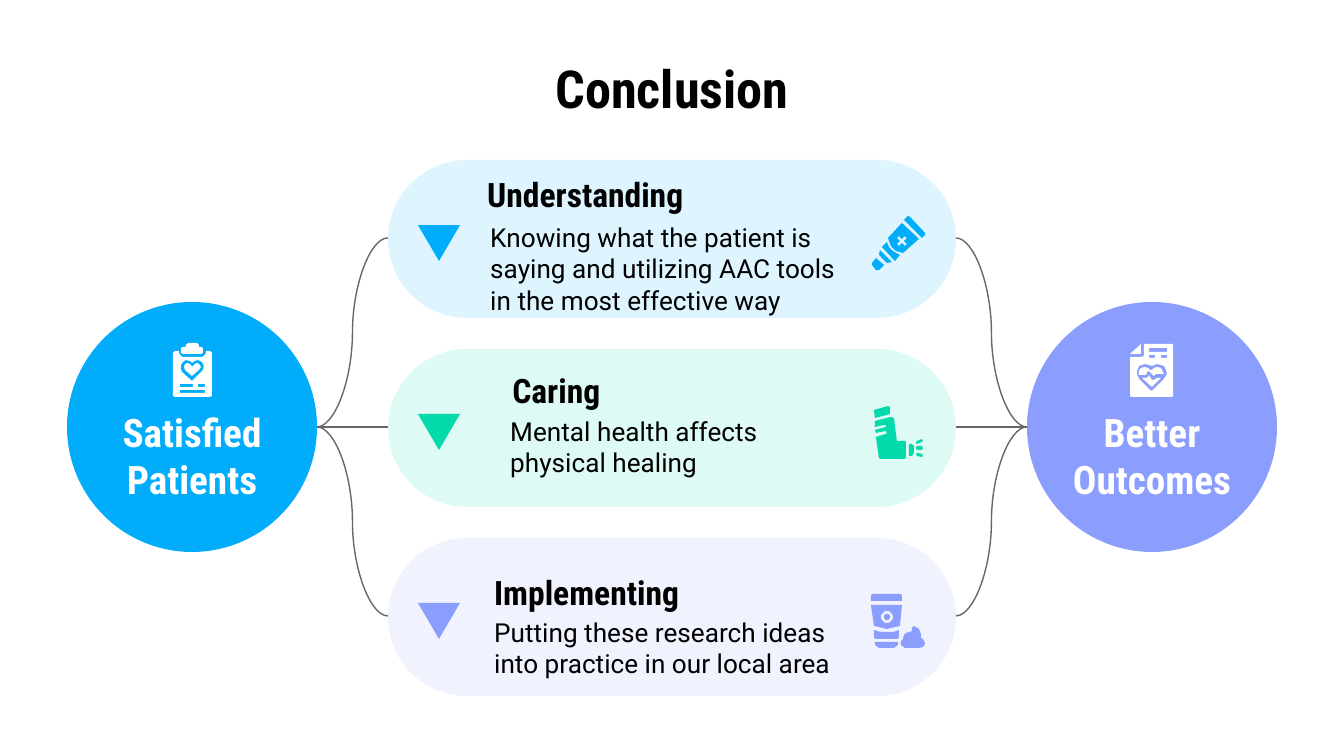
import math

from lxml import etree
from pptx import Presentation
from pptx import util as u
from pptx.dml.color import RGBColor
from pptx.enum import shapes, text
from pptx.oxml import ns

PX = 914400 / 134.4
BLUE = RGBColor(0x01, 0xAD, 0xFA)
GREEN = RGBColor(0x02, 0xDA, 0xAB)
VIOLET = RGBColor(0x8C, 0x9E, 0xFD)
GREY = RGBColor(0x66, 0x66, 0x66)
BLACK = RGBColor(0, 0, 0)
WHITE = RGBColor(0xFF, 0xFF, 0xFF)

HEADING = {"name": "Roboto Condensed", "bold": True}
BODY = {"name": "Roboto", "bold": False, "size": u.Pt(14)}

CIRCLE_SIZE = 250
PILL_WIDTH, PILL_HEIGHT, PILL_PITCH = 568, 158, 189


def emu(*lengths):
    return [u.Emu(round(length * PX)) for length in lengths]


def bar(left, top, right, bottom):
    return [(left, top), (right, top), (right, bottom), (left, bottom)]


def ring(x, y, radius):
    angles = [math.radians(step * 15) for step in range(24)]
    return [(x + radius * math.cos(a), y + radius * math.sin(a)) for a in angles]


# Each icon is a list of parts; a part is an outline followed by its holes.
TUBE = [
    [[(30, 7), (16, 22), (19, 30), (24, 35), (31, 37), (47, 23)],
     [(27, 20), (30, 23), (33, 20), (35, 22), (32, 25), (35, 28),
      (33, 30), (30, 27), (27, 30), (25, 28), (28, 25), (25, 22)]],
    [[(36, 0), (35, 1), (32, 4), (50, 22), (53, 19), (53, 17), (38, 1)]],
    [[(8, 34), (7, 39), (15, 47), (20, 46)]],
    [[(15, 26), (10, 31), (23, 45), (28, 39), (21, 35), (17, 31)]],
    [[(4, 42), (0, 47), (0, 49), (4, 54), (7, 54), (12, 49)]],
]
INHALER = [
    [[(0, 4), (14, 0), (16, 1), (16, 8), (1, 12)]],
    [[(35, 38), (35, 50), (38, 50), (40, 47), (40, 40), (38, 38)]],
    [[(43, 35), (48, 33), (49, 35), (48, 36), (43, 38), (42, 37)]],
    [[(43, 40), (48, 40), (49, 42), (48, 44), (43, 44), (42, 42)]],
    [[(44, 47), (48, 48), (49, 50), (48, 51), (43, 50), (42, 48)]],
    [[(17, 11), (1, 15), (1, 21), (10, 19), (12, 19), (12, 21), (1, 24),
      (2, 27), (12, 25), (13, 27), (12, 28), (2, 31), (5, 52), (7, 53),
      (31, 53), (32, 51), (32, 36), (31, 35), (23, 35), (20, 12)]],
]
CREAM = [
    [[(0, 7), (0, 2), (1, 0), (30, 0), (31, 2), (31, 7)]],
    [[(0, 11), (31, 11), (29, 32), (16, 35), (3, 32)], ring(16, 23, 6)],
    [ring(16, 23, 3)],
    [[(3, 36), (9, 38), (23, 38), (28, 36), (28, 43), (27, 45), (4, 45), (3, 43)]],
    [[(4, 48), (27, 48), (27, 51), (23, 54), (8, 54), (4, 51)]],
    [[(43, 32), (41, 34), (41, 37), (39, 38), (35, 39), (33, 41), (32, 45),
      (30, 47), (30, 51), (34, 54), (48, 54), (52, 53), (54, 50), (53, 46),
      (50, 44), (50, 40), (48, 35)]],
]
CLIPBOARD = [
    [[(19, 33), (12, 27), (11, 24), (12, 21), (15, 20), (18, 22), (19, 24),
      (22, 21), (24, 20), (26, 21), (28, 24), (26, 27)]],
    [[(0, 10), (2, 8), (6, 8), (6, 10), (8, 13), (10, 14), (29, 14), (31, 13),
      (33, 10), (33, 8), (37, 8), (39, 10), (39, 53), (37, 54), (2, 54), (0, 53)],
     [(19, 38), (9, 29), (8, 26), (8, 22), (10, 19), (13, 17), (17, 18),
      (19, 20), (22, 18), (25, 17), (29, 19), (31, 23), (30, 27)],
     bar(7, 41, 20, 44), bar(25, 41, 32, 44), bar(7, 47, 32, 50)],
    [[(8, 5), (10, 4), (13, 4), (13, 2), (15, 0), (24, 0), (26, 2), (26, 4),
      (28, 4), (30, 5), (30, 10), (28, 11), (10, 11), (8, 10)]],
]
REPORT = [
    [[(9, 31), (9, 27), (11, 24), (15, 23), (18, 24), (20, 26), (22, 26),
      (24, 24), (27, 23), (31, 24), (34, 30), (26, 30), (24, 32), (20, 28),
      (18, 27), (16, 31)]],
    [[(12, 34), (16, 34), (18, 33), (19, 31), (22, 36), (24, 36), (27, 34),
      (31, 34), (22, 43)]],
    [[(0, 10), (11, 0), (11, 10)]],
    [[(14, 0), (42, 0), (43, 1), (43, 52), (42, 53), (1, 53), (0, 52),
      (0, 13), (11, 13), (14, 12)],
     bar(19, 4, 37, 8), bar(19, 11, 25, 14), bar(31, 11, 37, 14),
     [(22, 22), (15, 20), (9, 22), (7, 27), (7, 30), (9, 35), (20, 46),
      (22, 47), (23, 46), (34, 35), (37, 30), (36, 26), (34, 22), (27, 20)]],
]

CIRCLES = [
    ("Satisfied Patients", BLUE, 67, CLIPBOARD, (106, 41)),
    ("Better Outcomes", VIOLET, 1027, REPORT, (103, 42)),
]
# Heading, body, colour, heading offset, body offset, icon, icon offset
PILLS = [
    ("Understanding", "Knowing what the patient is saying and utilizing AAC tools "
     "in the most effective way", BLUE, (86, 0), (89, 48), TUBE, (484, 56)),
    ("Caring", "Mental health affects physical healing",
     GREEN, (111, 7), (109, 53), INHALER, (486, 57)),
    ("Implementing", "Putting these research ideas into practice in our local area",
     VIOLET, (93, 20), (93, 65), CREAM, (483, 56)),
]


def paint(shape, color):
    shape.shadow.inherit = False
    shape.fill.solid()
    shape.fill.fore_color.rgb = color
    shape.line.fill.background()


def add_filled(page, kind, box, color):
    shape = page.shapes.add_shape(kind, *emu(*box))
    paint(shape, color)
    return shape


def fill_text(holder, words, align, anchor, color, font):
    frame = holder.text_frame
    margins = dict.fromkeys(
        ("margin_left", "margin_right", "margin_top", "margin_bottom"), u.Inches(0.1))
    settings = {**margins, "word_wrap": True, "vertical_anchor": anchor,
                "auto_size": text.MSO_AUTO_SIZE.NONE}
    for name, value in settings.items():
        setattr(frame, name, value)
    para = frame.paragraphs[0]
    para.alignment = align
    span = para.add_run()
    span.text = words
    span.font.color.rgb = color
    for name, value in font.items():
        setattr(span.font, name, value)


def add_label(page, box, words, font, color=BLACK, align=text.PP_ALIGN.LEFT):
    label = page.shapes.add_textbox(*emu(*box))
    fill_text(label, words, align, text.MSO_ANCHOR.TOP, color, font)


def add_icon(page, parts, left, top, color):
    pieces = []
    for outlines in parts:
        builder = page.shapes.build_freeform(*outlines[0][0], scale=PX)
        for number, points in enumerate(outlines):
            if number:
                builder.move_to(*points[0])
            builder.add_line_segments(points[1:], close=True)
        piece = builder.convert_to_shape(*emu(left, top))
        paint(piece, color)
        pieces.append(piece)
    page.shapes.add_group_shape(pieces)


def add_title(page, box, words):
    title = page.shapes.title
    title.left, title.top, title.width, title.height = emu(*box)
    fill_text(title, words, text.PP_ALIGN.CENTER, text.MSO_ANCHOR.MIDDLE, BLACK,
              {**HEADING, "size": u.Pt(28)})


def add_circle(page, left, top, words, color, icon, icon_at):
    add_filled(page, shapes.MSO_SHAPE.OVAL, (left, top, CIRCLE_SIZE, CIRCLE_SIZE), color)
    add_label(page, (left + 22, top + 93, 206, 99), words,
              {**HEADING, "size": u.Pt(21)}, WHITE, text.PP_ALIGN.CENTER)
    add_icon(page, icon, left + icon_at[0], top + icon_at[1], WHITE)


def add_pill(page, left, top, heading, body, color, heading_at, body_at, icon, icon_at):
    pill = add_filled(page, shapes.MSO_SHAPE.ROUNDED_RECTANGLE,
                      (left, top, PILL_WIDTH, PILL_HEIGHT), color)
    pill.adjustments[0] = 0.5
    tint = pill.fill._xPr.find(".//" + ns.qn("a:srgbClr"))
    etree.SubElement(tint, ns.qn("a:alpha"), val="13000")
    add_label(page, (left + heading_at[0], top + heading_at[1], 259, 43), heading,
              {**HEADING, "size": u.Pt(18)})
    add_label(page, (left + body_at[0], top + body_at[1], 375, 71), body, BODY)
    marker = add_filled(page, shapes.MSO_SHAPE.ISOSCELES_TRIANGLE,
                        (left + 30, top + 65, 42, 36), color)
    marker.rotation = 180
    add_icon(page, icon, left + icon_at[0], top + icon_at[1], color)


def add_curve(page, *ends):
    curve = page.shapes.add_connector(shapes.MSO_CONNECTOR.CURVE, *emu(*ends))
    curve.line.color.rgb = GREY
    curve.line.width = u.Pt(0.75)
    etree.SubElement(curve._element.spPr, ns.qn("a:effectLst"))


def main():
    deck = Presentation()
    deck.slide_width, deck.slide_height = emu(1344, 756)
    page = deck.slides.add_slide(deck.slide_layouts[5])
    pill_left, pill_top, circle_top = 388, 160, 302
    add_title(page, (67, 60, 1210, 55), "Conclusion")
    for words, color, left, icon, icon_at in CIRCLES:
        add_circle(page, left, circle_top, words, color, icon, icon_at)
    hub = circle_top + CIRCLE_SIZE // 2
    for row, content in enumerate(PILLS):
        top = pill_top + row * PILL_PITCH
        add_pill(page, pill_left, top, *content)
        middle = hub + (row - 1) * PILL_PITCH
        add_curve(page, CIRCLES[0][2] + CIRCLE_SIZE, hub, pill_left, middle)
        add_curve(page, pill_left + PILL_WIDTH, middle, CIRCLES[1][2], hub)
    deck.save("out.pptx")


if __name__ == "__main__":
    main()
